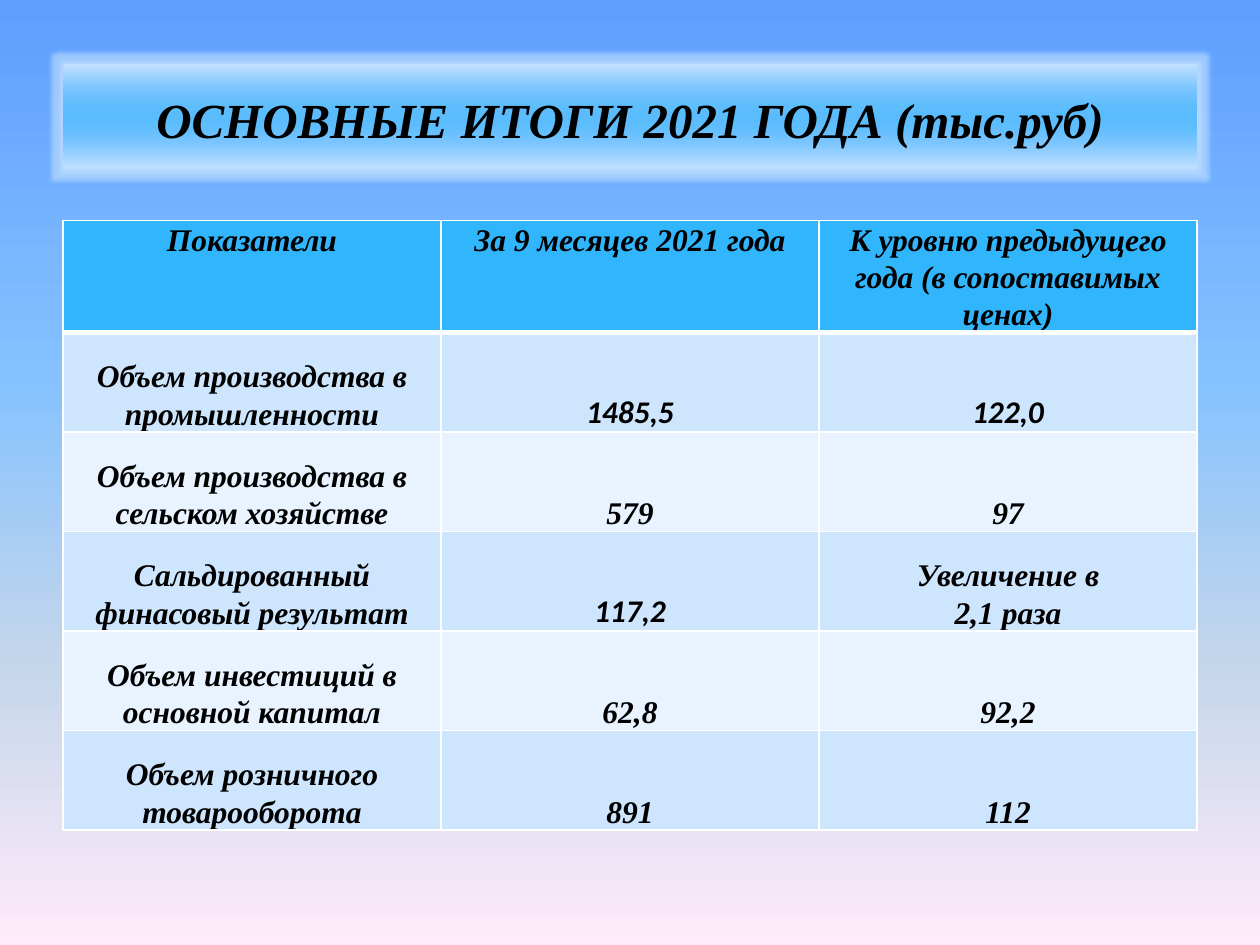
from lxml import etree
from pptx import Presentation
from pptx.dml.color import RGBColor
from pptx.enum import shapes, text
from pptx.oxml import ns
from pptx.util import Inches, Pt

TITLE = "ОСНОВНЫЕ ИТОГИ 2021 ГОДА (тыс.руб)"
HEADER = ("Показатели", "За 9 месяцев 2021 года",
          "К уровню предыдущего года (в сопоставимых ценах)")
RESULTS = [
    ("Объем производства в промышленности", "1485,5", "122,0"),
    ("Объем производства в сельском хозяйстве", "579", "97"),
    ("Сальдированный финасовый результат", "117,2", "Увеличение в\n2,1 раза"),
    ("Объем инвестиций в основной капитал", "62,8", "92,2"),
    ("Объем розничного товарооборота", "891", "112"),
]
CALIBRI_VALUES = {"1485,5", "122,0", "117,2"}
SKY = [(0, "5E9EFF"), (40, "85C2FF"), (70, "C4D6EB"), (100, "FFEBFA")]
BANNER = [(0, "C1E0FF"), (25, "76C3FD"), (40, "5EBDFD"), (50, "5ABCFD"),
          (60, "5EBDFD"), (75, "7AC5FF"), (100, "C1E0FF")]
HEADER_FILL, BANDS = "31B6FD", ("CEE5FE", "E8F3FF")
LEFT, WIDTH, ROW_HEIGHT = 0.5, 9, 0.79
CELL_FORMAT = {"margin_left": Inches(0.07), "margin_right": Inches(0.07),
               "margin_top": 0, "margin_bottom": 0}


def color(value):
    return RGBColor.from_string(value)


def add_node(parent, tag, **attributes):
    return etree.SubElement(parent, ns.qn(tag), attributes)


def add_color(parent, value):
    return add_node(parent, "a:srgbClr", val=value)


def fill_gradient(fill, owner, stops):
    """Fill from top to bottom with any number of stops."""
    fill.gradient()
    fill.gradient_angle = 270
    stop_list = owner.find(".//" + ns.qn("a:gsLst"))
    for old_stop in list(stop_list):
        stop_list.remove(old_stop)
    for percent, value in stops:
        add_color(add_node(stop_list, "a:gs", pos=str(percent * 1000)), value)


def write(frame, words, size, font_name="Times New Roman"):
    frame.text = words
    font_format = {"name": font_name, "size": Pt(size), "bold": True, "italic": True}
    for paragraph in frame.paragraphs:
        paragraph.alignment = text.PP_ALIGN.CENTER
        paragraph.line_spacing = 1.07
        for run in paragraph.runs:
            for key, value in font_format.items():
                setattr(run.font, key, value)
            run.font.color.rgb = color("000000")


def draw_borders(cell, top, bottom):
    """White borders; top and bottom are widths in points."""
    properties = cell._tc.get_or_add_tcPr()
    widths = {"a:lnL": 1, "a:lnR": 1, "a:lnT": top, "a:lnB": bottom}
    for index, (tag, width) in enumerate(widths.items()):
        line = add_node(properties, tag, w=str(Pt(width)))
        add_color(add_node(line, "a:solidFill"), "FFFFFF")
        properties.insert(index, line)


def add_banner(slide):
    banner = slide.shapes.add_shape(
        shapes.MSO_SHAPE.RECTANGLE, Inches(LEFT), Inches(0.51), Inches(WIDTH), Inches(0.83))
    banner.shadow.inherit = False
    banner.line.fill.background()
    properties = banner._element.spPr
    fill_gradient(banner.fill, properties, BANNER)
    glow = add_node(properties.find(ns.qn("a:effectLst")), "a:glow", rad=str(Pt(5)))
    add_node(add_color(glow, "C1E0FF"), "a:alpha", val="60000")
    banner.text_frame.word_wrap = True
    banner.text_frame.vertical_anchor = text.MSO_ANCHOR.MIDDLE
    write(banner.text_frame, TITLE, 28)


def add_results(slide):
    rows = [HEADER] + RESULTS
    table = slide.shapes.add_table(
        len(rows), len(HEADER), Inches(LEFT), Inches(1.75),
        Inches(WIDTH), Inches(ROW_HEIGHT * len(rows))).table
    for r, row in enumerate(rows):
        table.rows[r].height = Inches(ROW_HEIGHT)
        for c, words in enumerate(row):
            cell = table.cell(r, c)
            for key, value in CELL_FORMAT.items():
                setattr(cell, key, value)
            cell.vertical_anchor = text.MSO_ANCHOR.BOTTOM if r else text.MSO_ANCHOR.TOP
            cell.fill.solid()
            cell.fill.fore_color.rgb = color(BANDS[(r - 1) % 2] if r else HEADER_FILL)
            draw_borders(cell, top=3 if r == 1 else 1, bottom=3 if r == 0 else 1)
            write(cell.text_frame, words, 18,
                  "Calibri" if words in CALIBRI_VALUES else "Times New Roman")


def main():
    deck = Presentation()
    deck.slide_width, deck.slide_height = Inches(10), Inches(7.5)
    slide = deck.slides.add_slide(deck.slide_layouts[6])
    fill_gradient(slide.background.fill, slide._element, SKY)
    add_results(slide)
    add_banner(slide)
    deck.save("out.pptx")


if __name__ == "__main__":
    main()
